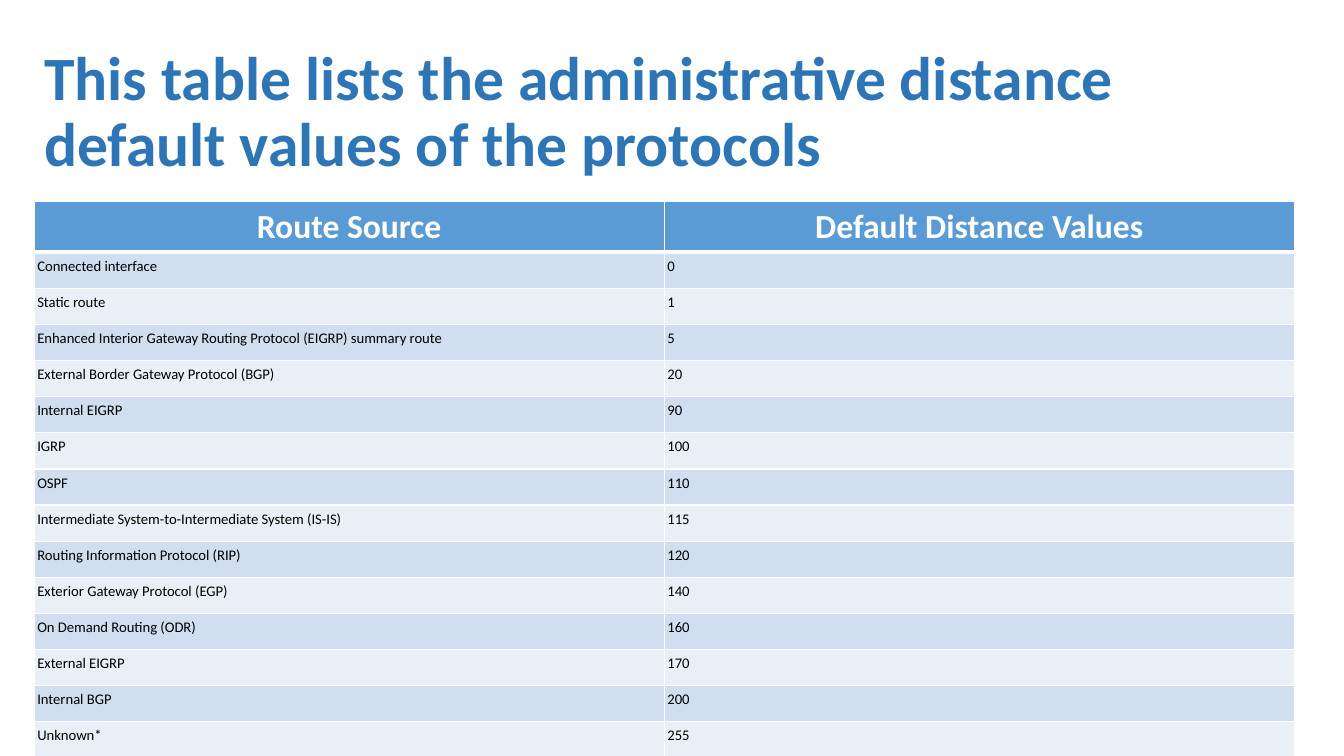
from dataclasses import dataclass

from lxml import etree
from pptx import Presentation
from pptx import util as u
from pptx.dml.color import RGBColor
from pptx.enum import text
from pptx.oxml.ns import qn

FONT = "Calibri"
TITLE_BLUE = RGBColor(0x2E, 0x75, 0xB6)
HEADER_BLUE = RGBColor(0x5B, 0x9B, 0xD5)
BAND_DARK = RGBColor(0xD1, 0xDE, 0xEF)
BAND_LIGHT = RGBColor(0xE9, 0xEF, 0xF7)
WHITE = RGBColor(0xFF, 0xFF, 0xFF)
BLACK = RGBColor(0x00, 0x00, 0x00)

LEFT = u.Cm(0.86)
THIN, THICK = u.Pt(0.96), u.Pt(3)


@dataclass(frozen=True)
class Route:
    source: str
    distance: int


@dataclass(frozen=True)
class CellStyle:
    size: float
    color: RGBColor
    fill: RGBColor
    bold: bool = False
    align: text.PP_ALIGN = text.PP_ALIGN.LEFT
    top: int = THIN
    bottom: int = THIN


ROUTES = [
    Route("Connected interface", 0),
    Route("Static route", 1),
    Route("Enhanced Interior Gateway Routing Protocol (EIGRP) summary route", 5),
    Route("External Border Gateway Protocol (BGP)", 20),
    Route("Internal EIGRP", 90),
    Route("IGRP", 100),
    Route("OSPF", 110),
    Route("Intermediate System-to-Intermediate System (IS-IS)", 115),
    Route("Routing Information Protocol (RIP)", 120),
    Route("Exterior Gateway Protocol (EGP)", 140),
    Route("On Demand Routing (ODR)", 160),
    Route("External EIGRP", 170),
    Route("Internal BGP", 200),
    Route("Unknown*", 255),
]
HEADER = CellStyle(24, WHITE, HEADER_BLUE, True, text.PP_ALIGN.CENTER, bottom=THICK)


def format_text(para, size: float, color: RGBColor, bold: bool) -> None:
    for span in para.runs:
        span.font.name = FONT
        span.font.size = u.Pt(size)
        span.font.bold = bold
        span.font.color.rgb = color


def add_border(cell, side: str, width: int) -> None:
    properties = cell._tc.get_or_add_tcPr()
    line = etree.SubElement(properties, qn(f"a:ln{side}"), w=str(int(width)))
    fill = etree.SubElement(line, qn("a:solidFill"))
    etree.SubElement(fill, qn("a:srgbClr"), val=str(WHITE))


def fill_cell(cell, content: str, style: CellStyle) -> None:
    cell.margin_left = cell.margin_right = u.Cm(0.08)
    cell.margin_top = cell.margin_bottom = u.Cm(0.13)
    # Borders come before the fill in the cell properties
    for side, width in zip("LRTB", (THIN, THIN, style.top, style.bottom)):
        add_border(cell, side, width)
    cell.fill.solid()
    cell.fill.fore_color.rgb = style.fill
    para = cell.text_frame.paragraphs[0]
    para.text = content
    para.alignment = style.align
    format_text(para, style.size, style.color, style.bold)


def add_title(page) -> None:
    box = page.shapes.add_textbox(LEFT, u.Cm(1.02), u.Cm(32.21), u.Cm(3.68))
    frame = box.text_frame
    frame.word_wrap = True
    frame.vertical_anchor = text.MSO_ANCHOR.MIDDLE
    frame.text = "This table lists the administrative distance default values of the protocols"
    para = frame.paragraphs[0]
    para.line_spacing = 0.9
    format_text(para, 44, TITLE_BLUE, True)


def add_distance_table(page) -> None:
    header_height, row_height = u.Cm(1.04), u.Cm(0.91)
    table = page.shapes.add_table(
        len(ROUTES) + 1, 2, LEFT, u.Cm(5.08), u.Cm(31.76),
        header_height + row_height * len(ROUTES)).table
    for row in table.rows:
        row.height = row_height
    table.rows[0].height = header_height

    for column, heading in enumerate(("Route Source", "Default Distance Values")):
        fill_cell(table.cell(0, column), heading, HEADER)
    for index, route in enumerate(ROUTES, start=1):
        style = CellStyle(10.5, BLACK, BAND_DARK if index % 2 else BAND_LIGHT,
                          top=THICK if index == 1 else THIN)
        fill_cell(table.cell(index, 0), route.source, style)
        fill_cell(table.cell(index, 1), str(route.distance), style)


def main() -> None:
    deck = Presentation()
    deck.slide_width, deck.slide_height = u.Cm(33.87), u.Cm(19.05)
    page = deck.slides.add_slide(deck.slide_layouts[6])
    add_title(page)
    add_distance_table(page)
    deck.save("out.pptx")


if __name__ == "__main__":
    main()
